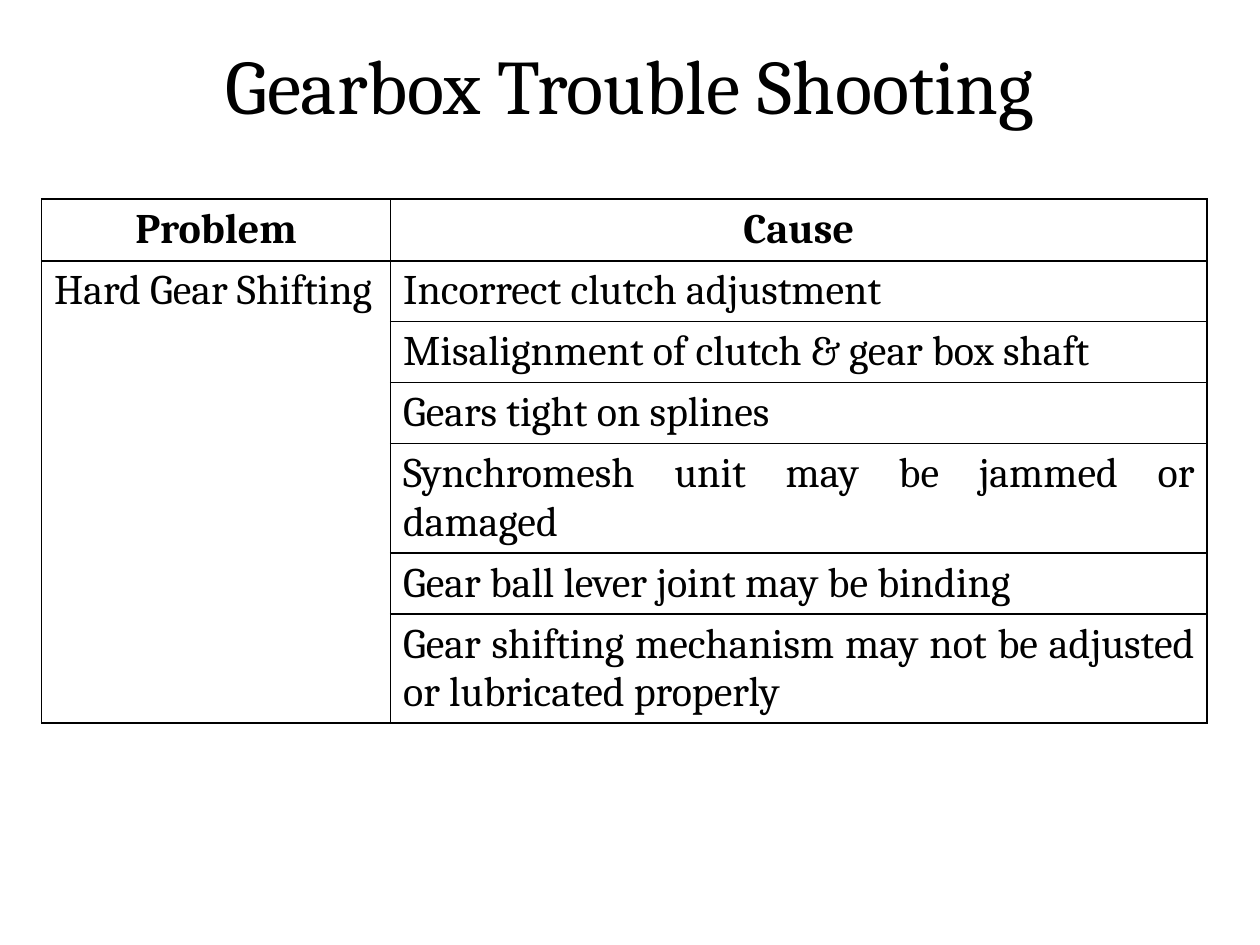
from lxml import etree
from pptx import Presentation
from pptx.dml.color import RGBColor
from pptx.enum.text import MSO_ANCHOR, PP_ALIGN
from pptx.oxml.ns import qn
from pptx.util import Inches, Pt

LEFT, MID, JUST = PP_ALIGN.LEFT, PP_ALIGN.CENTER, PP_ALIGN.JUSTIFY
CENTRE = MSO_ANCHOR.MIDDLE

TITLE = "Gearbox Trouble Shooting"
HEADS = ("Problem", "Cause")
FAULT = "Hard Gear Shifting"
CAUSES = [
    ("Incorrect clutch adjustment", 1),
    ("Misalignment of clutch & gear box shaft", 1),
    ("Gears tight on splines", 1),
    ("Synchromesh unit may be jammed or damaged", 2),
    ("Gear ball lever joint may be binding", 1),
    ("Gear shifting mechanism may not be adjusted or lubricated properly", 2),
]

THEME = {
    "font": "Cambria",
    "ink": RGBColor(0, 0, 0),
    "paper": RGBColor(255, 255, 255),
    "title": Pt(44),
    "body": Pt(24),
    "rule": Pt(1),
}
COLS = (2.77, 6.48)
HEAD = 0.49
PAD, LINE = 0.1, 0.38
ROWS = [HEAD] + [PAD + LINE * count for _, count in CAUSES]


def write(frame, text, size, align, bold=False):
    frame.text = text
    para = frame.paragraphs[0]
    para.alignment = align
    font = para.runs[0].font
    look = {"name": THEME["font"], "size": size, "bold": bold}
    for key, value in look.items():
        setattr(font, key, value)
    font.color.rgb = THEME["ink"]


def frame_cell(cell):
    props = cell._tc.get_or_add_tcPr()
    for side in ("lnL", "lnR", "lnT", "lnB"):
        line = etree.SubElement(props, qn(f"a:{side}"), w=str(THEME["rule"]))
        fill = etree.SubElement(line, qn("a:solidFill"))
        etree.SubElement(fill, qn("a:srgbClr"), val=str(THEME["ink"]))
    cell.fill.solid()
    cell.fill.fore_color.rgb = THEME["paper"]


def add_title(slide):
    title = slide.shapes.title
    place = {"left": 0.5, "top": 0.25, "width": 9, "height": 0.83}
    for key, value in place.items():
        setattr(title, key, Inches(value))
    title.text_frame.vertical_anchor = CENTRE
    write(title.text_frame, TITLE, THEME["title"], MID)


def add_grid(slide):
    box = [Inches(v) for v in (0.33, 1.58, sum(COLS), sum(ROWS))]
    grid = slide.shapes.add_table(len(ROWS), len(COLS), *box).table
    for col, width in zip(grid.columns, COLS):
        col.width = Inches(width)
    for row, height in zip(grid.rows, ROWS):
        row.height = Inches(height)
    for cell in grid.iter_cells():
        frame_cell(cell)
    grid.cell(1, 0).merge(grid.cell(len(CAUSES), 0))

    size = THEME["body"]
    for col, text in enumerate(HEADS):
        write(grid.cell(0, col).text_frame, text, size, MID, True)
    write(grid.cell(1, 0).text_frame, FAULT, size, LEFT)
    for row, (text, _) in enumerate(CAUSES, 1):
        write(grid.cell(row, 1).text_frame, text, size, JUST)


def main():
    deck = Presentation()
    deck.slide_width, deck.slide_height = Inches(10), Inches(7.5)
    slide = deck.slides.add_slide(deck.slide_layouts[5])
    add_title(slide)
    add_grid(slide)
    deck.save("out.pptx")


if __name__ == "__main__":
    main()
